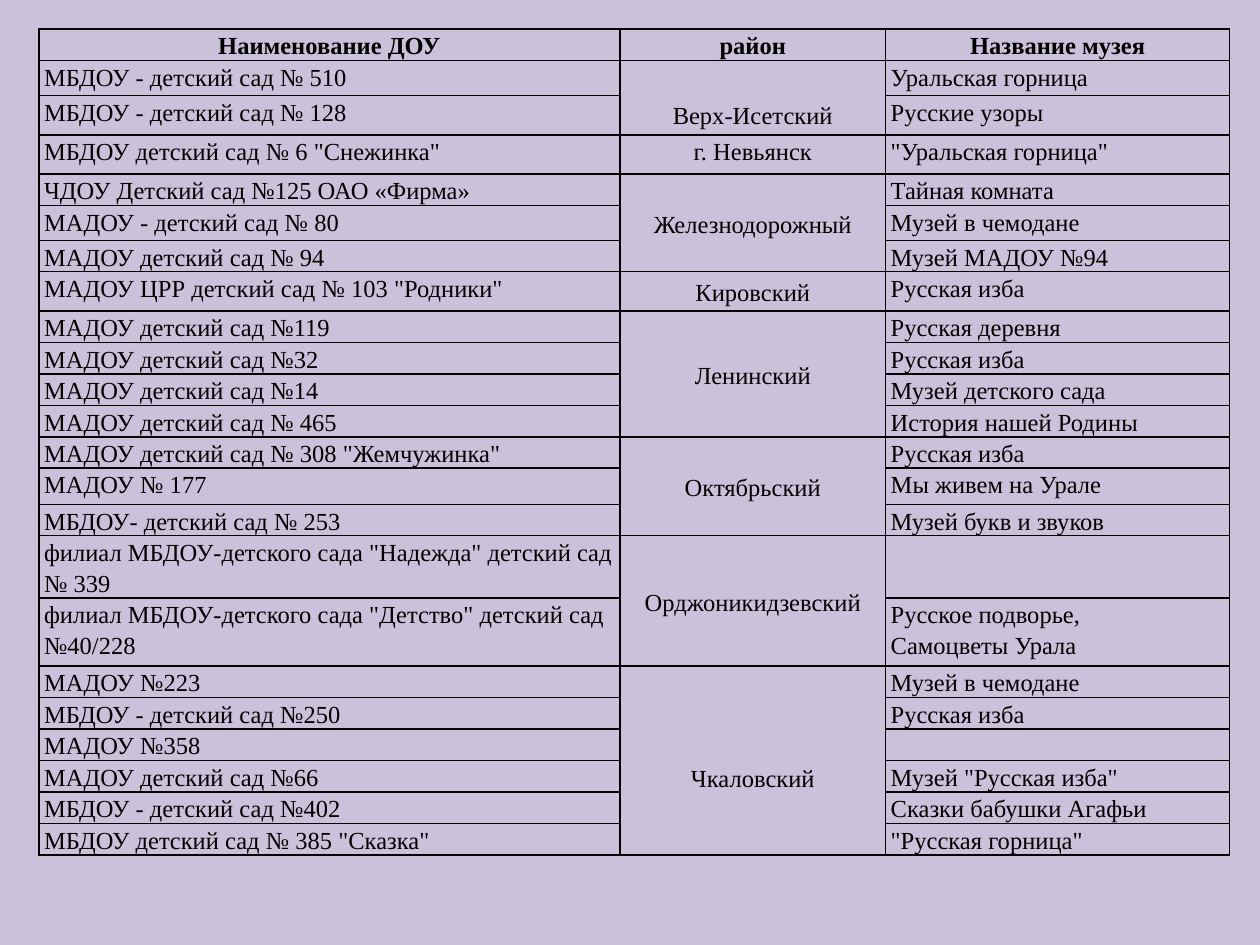
"""Build a slide with a table of kindergartens, districts and their museums."""
from lxml import etree
from pptx import Presentation
from pptx.dml.color import RGBColor
from pptx.enum.text import MSO_ANCHOR, PP_ALIGN
from pptx.oxml.ns import qn
from pptx.util import Inches, Pt

BACKGROUND = RGBColor(0xCC, 0xC1, 0xDA)
BLACK = RGBColor(0x00, 0x00, 0x00)
LEFT, CENTER = PP_ALIGN.LEFT, PP_ALIGN.CENTER
TOP, MIDDLE = MSO_ANCHOR.TOP, MSO_ANCHOR.MIDDLE
FONT_NAME = "Times New Roman"
FONT_SIZE = Pt(14)
LINE_HEIGHT = 0.26

COLUMN_WIDTHS = [4.61, 2.11, 2.73]
HEADER_HEIGHT = 0.25
HEADERS = ["Наименование ДОУ", "район", "Название музея"]

DISTRICTS = [
    ("Верх-Исетский", MIDDLE, LINE_HEIGHT, [
        (0.28, "МБДОУ - детский сад № 510", "Уральская горница"),
        (0.31, "МБДОУ - детский сад № 128", "Русские узоры"),
    ]),
    ("г. Невьянск", TOP, 0, [
        (0.31, 'МБДОУ детский сад № 6 "Снежинка"', '"Уральская горница"'),
    ]),
    ("Железнодорожный", MIDDLE, 0, [
        (0.25, "ЧДОУ Детский сад №125 ОАО «Фирма»", "Тайная комната"),
        (0.28, "МАДОУ - детский сад № 80", "Музей в чемодане"),
        (0.23, "МАДОУ детский сад № 94", "Музей МАДОУ №94"),
    ]),
    ("Кировский", MIDDLE, 0, [
        (0.31, 'МАДОУ ЦРР детский сад № 103 "Родники"', "Русская изба"),
    ]),
    ("Ленинский", MIDDLE, 0, [
        (0.25, "МАДОУ детский сад №119", "Русская деревня"),
        (0.25, "МАДОУ детский сад №32", "Русская изба"),
        (0.25, "МАДОУ детский сад №14", "Музей детского сада"),
        (0.25, "МАДОУ детский сад № 465", "История нашей Родины"),
    ]),
    ("Октябрьский", MIDDLE, 0, [
        (0.22, 'МАДОУ детский сад № 308 "Жемчужинка"', "Русская изба"),
        (0.29, "МАДОУ № 177", "Мы живем на Урале"),
        (0.21, "МБДОУ- детский сад № 253", "Музей букв и звуков"),
    ]),
    ("Орджоникидзевский", MIDDLE, 0, [
        (0.47, 'филиал МБДОУ-детского сада "Надежда" детский сад № 339', ""),
        (0.54, 'филиал МБДОУ-детского сада "Детство" детский сад №40/228',
         "Русское подворье,\nСамоцветы Урала"),
    ]),
    ("Чкаловский", MIDDLE, LINE_HEIGHT, [
        (0.25, "МАДОУ №223", "Музей в чемодане"),
        (0.25, "МБДОУ - детский сад №250", "Русская изба"),
        (0.25, "МАДОУ №358", ""),
        (0.25, "МАДОУ детский сад №66", 'Музей "Русская изба"'),
        (0.25, "МБДОУ - детский сад №402", "Сказки бабушки Агафьи"),
        (0.25, 'МБДОУ детский сад № 385 "Сказка"', '"Русская горница"'),
    ]),
]


def write_cell(cell, text, alignment=LEFT, bold=False):
    for index, line in enumerate(text.split("\n")):
        frame = cell.text_frame
        paragraph = frame.add_paragraph() if index else frame.paragraphs[0]
        paragraph.alignment = alignment
        paragraph.line_spacing = 1.15
        if line:
            run = paragraph.add_run()
            run.text = line
            run.font.name = FONT_NAME
            run.font.size = FONT_SIZE
            run.font.bold = bold
            run.font.color.rgb = BLACK
        else:
            end = etree.SubElement(paragraph._p, qn("a:endParaRPr"))
            end.set("sz", str(FONT_SIZE.centipoints))


def format_cell(cell):
    cell.margin_left = cell.margin_right = Inches(0.04)
    cell.margin_top = cell.margin_bottom = 0
    properties = cell._tc.get_or_add_tcPr()
    for side in ("a:lnL", "a:lnR", "a:lnT", "a:lnB"):
        line = etree.SubElement(properties, qn(side), w=str(Pt(1)))
        fill = etree.SubElement(line, qn("a:solidFill"))
        etree.SubElement(fill, qn("a:srgbClr"), val=str(BLACK))
    cell.fill.background()


presentation = Presentation()
presentation.slide_width = Inches(10)
presentation.slide_height = Inches(7.5)
slide = presentation.slides.add_slide(presentation.slide_layouts[6])
slide.background.fill.solid()
slide.background.fill.fore_color.rgb = BACKGROUND

heights = [HEADER_HEIGHT] + [row[0] for district in DISTRICTS for row in district[3]]
table = slide.shapes.add_table(
    len(heights), len(COLUMN_WIDTHS), Inches(0.31), Inches(0.23),
    Inches(sum(COLUMN_WIDTHS)), Inches(sum(heights))).table
table.first_row = False
table.horz_banding = False
for column, width in zip(table.columns, COLUMN_WIDTHS):
    column.width = Inches(width)
for row, height in zip(table.rows, heights):
    row.height = Inches(height)
for cell in table.iter_cells():
    format_cell(cell)

for column_index, header in enumerate(HEADERS):
    write_cell(table.cell(0, column_index), header, CENTER, bold=True)

first_row = 1
for district, anchor, top_margin, museums in DISTRICTS:
    last_row = first_row + len(museums) - 1
    district_cell = table.cell(first_row, 1)
    if last_row > first_row:
        district_cell.merge(table.cell(last_row, 1))
    district_cell.vertical_anchor = anchor
    district_cell.margin_top = Inches(top_margin)
    for row_index, (height, kindergarten, museum) in enumerate(museums, first_row):
        write_cell(table.cell(row_index, 0), kindergarten)
        write_cell(table.cell(row_index, 1), district if row_index == first_row else "", CENTER)
        write_cell(table.cell(row_index, 2), museum)
    first_row = last_row + 1

presentation.save("out.pptx")
